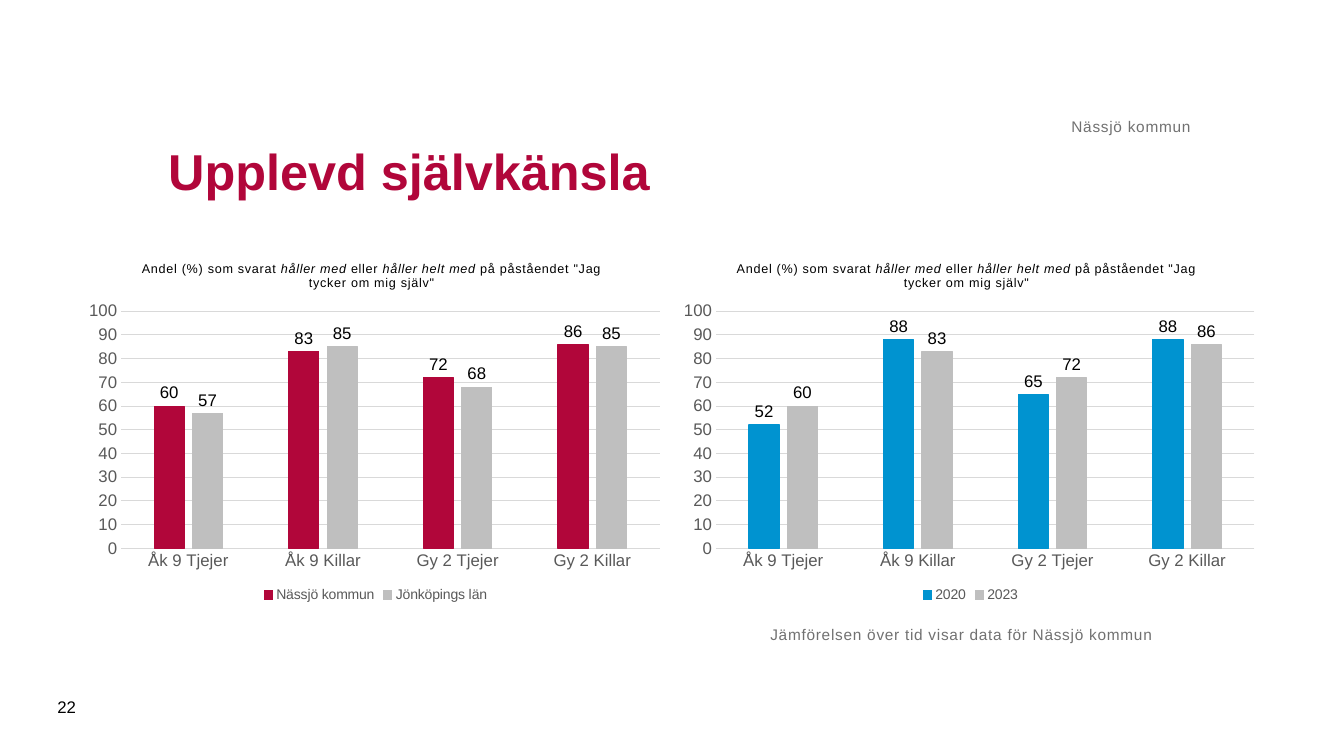
from lxml.etree import SubElement
from pptx import Presentation
from pptx.chart.data import CategoryChartData
from pptx.dml.color import RGBColor
from pptx.enum.chart import XL_CHART_TYPE, XL_LABEL_POSITION, XL_LEGEND_POSITION, XL_TICK_MARK
from pptx.enum.text import MSO_ANCHOR, PP_ALIGN
from pptx.oxml.ns import qn
from pptx.util import Emu, Pt

PX = 9144
NUMBER_FORMAT = "#,##0;#,##0"
CRIMSON, BLUE, SILVER = "B1063A", "0093D0", "BFBFBF"
BLACK, GREY, AXIS_GREY, GRID_GREY = "000000", "717171", "595959", "D9D9D9"


def style(font, size, color, **extras):
    for name, value in {"name": "Arial", "size": Pt(size), **extras}.items():
        setattr(font, name, value)
    font.color.rgb = RGBColor.from_string(color)


def place(parent, position, **fractions):
    for old in parent.findall(qn("c:layout")):
        parent.remove(old)
    layout = SubElement(parent, qn("c:layout"))
    parent.insert(position, layout)
    manual = SubElement(layout, qn("c:manualLayout"))
    if "w" in fractions:
        SubElement(manual, qn("c:layoutTarget")).set("val", "inner")
    for axis in "xy":
        SubElement(manual, qn(f"c:{axis}Mode")).set("val", "edge")
    for name, value in fractions.items():
        SubElement(manual, qn(f"c:{name}")).set("val", str(value))


deck = Presentation()
deck.slide_width, deck.slide_height = Emu(1333 * PX), Emu(750 * PX)
slide = deck.slides.add_slide(deck.slide_layouts[6])

groups = ["Åk 9 Tjejer", "Åk 9 Killar", "Gy 2 Tjejer", "Gy 2 Killar"]
question = [
    ("Andel (%) som svarat ", False),
    ("håller med", True),
    (" eller ", False),
    ("håller helt med", True),
    (' på påståendet "Jag tycker om mig själv"', False),
]
comparisons = [
    (79, [("Nässjö kommun", [60, 83, 72, 86], CRIMSON),
          ("Jönköpings län", [57, 85, 68, 85], SILVER)]),
    (669, [("2020", [52, 88, 65, 88], BLUE),
           ("2023", [60, 83, 72, 86], SILVER)]),
]

for left, answers in comparisons:
    data = CategoryChartData()
    data.categories = groups
    for name, shares, color in answers:
        data.add_series(name, shares)
    chart = slide.shapes.add_chart(
        XL_CHART_TYPE.COLUMN_CLUSTERED,
        *[Emu(n * PX) for n in (left, 240, 587, 362)], data).chart
    style(chart.font, 10, BLACK)

    heading = chart.chart_title.text_frame.paragraphs[0]
    for words, italic in question:
        run = heading.add_run()
        run.text = words
        style(run.font, 9, BLACK, bold=False, italic=italic)
        run._r.get_or_add_rPr().set("spc", "50")
    chart.chart_title.include_in_layout = False
    place(chart.chart_title._element, 1, x=0.1, y=0.04)

    chart.has_legend = True
    chart.legend.position = XL_LEGEND_POSITION.BOTTOM
    chart.legend.include_in_layout = False
    style(chart.legend.font, 10, AXIS_GREY)

    shares_axis, groups_axis = chart.value_axis, chart.category_axis
    for axis in (shares_axis, groups_axis):
        axis.major_tick_mark = axis.minor_tick_mark = XL_TICK_MARK.NONE
        style(axis.tick_labels.font, 12, AXIS_GREY)
    for name, value in {"minimum_scale": 0, "maximum_scale": 100, "major_unit": 10}.items():
        setattr(shares_axis, name, value)
    shares_axis.tick_labels.number_format = NUMBER_FORMAT
    shares_axis.tick_labels.number_format_is_linked = False
    shares_axis.format.line.fill.background()
    for line in (shares_axis.major_gridlines.format.line, groups_axis.format.line):
        line.color.rgb = RGBColor.from_string(GRID_GREY)
        line.width = Pt(0.75)

    bars = chart.plots[0]
    for name, value in {"gap_width": 219, "overlap": -27, "vary_by_categories": False}.items():
        setattr(bars, name, value)
    for series, (name, shares, color) in zip(bars.series, answers):
        series.format.fill.solid()
        series.format.fill.fore_color.rgb = RGBColor.from_string(color)
        series.format.line.color.rgb = RGBColor.from_string(color)
        series.format.line.width = Pt(0.75)
        label_format = {
            "show_value": True,
            "position": XL_LABEL_POSITION.OUTSIDE_END,
            "number_format": NUMBER_FORMAT,
            "number_format_is_linked": False,
        }
        for key, value in label_format.items():
            setattr(series.data_labels, key, value)
        style(series.data_labels.font, 12, BLACK)
    plot_area = chart._chartSpace.find(qn("c:chart")).find(qn("c:plotArea"))
    place(plot_area, 0, x=0.07, y=0.19, w=0.91, h=0.65)

texts = [
    ("Upplevd självkänsla", (157, 98, 1024, 142), 36, CRIMSON, True,
     MSO_ANCHOR.MIDDLE, PP_ALIGN.LEFT, 10, 0),
    ("Nässjö kommun", (157, 62, 1024, 73), 11, GREY, False,
     MSO_ANCHOR.BOTTOM, PP_ALIGN.RIGHT, 0, 50),
    ("22", (47, 681, 57, 40), 12, BLACK, False,
     MSO_ANCHOR.MIDDLE, PP_ALIGN.LEFT, 10, 0),
    ("Jämförelsen över tid visar data för Nässjö kommun", (764, 620, 531, 94), 11, GREY, False,
     MSO_ANCHOR.TOP, PP_ALIGN.LEFT, 0, 50),
]
for words, bounds, size, color, bold, anchor, alignment, inset, spacing in texts:
    frame = slide.shapes.add_textbox(*[Emu(n * PX) for n in bounds]).text_frame
    frame_format = {
        "word_wrap": True,
        "vertical_anchor": anchor,
        "margin_left": Emu(inset * PX),
        "margin_right": Emu(inset * PX),
        "margin_top": Emu(inset * PX // 2),
        "margin_bottom": Emu(inset * PX // 2),
    }
    for key, value in frame_format.items():
        setattr(frame, key, value)
    paragraph = frame.paragraphs[0]
    paragraph.alignment = alignment
    run = paragraph.add_run()
    run.text = words
    style(run.font, size, color, bold=bold)
    run._r.get_or_add_rPr().set("spc", str(spacing))

deck.save("out.pptx")
